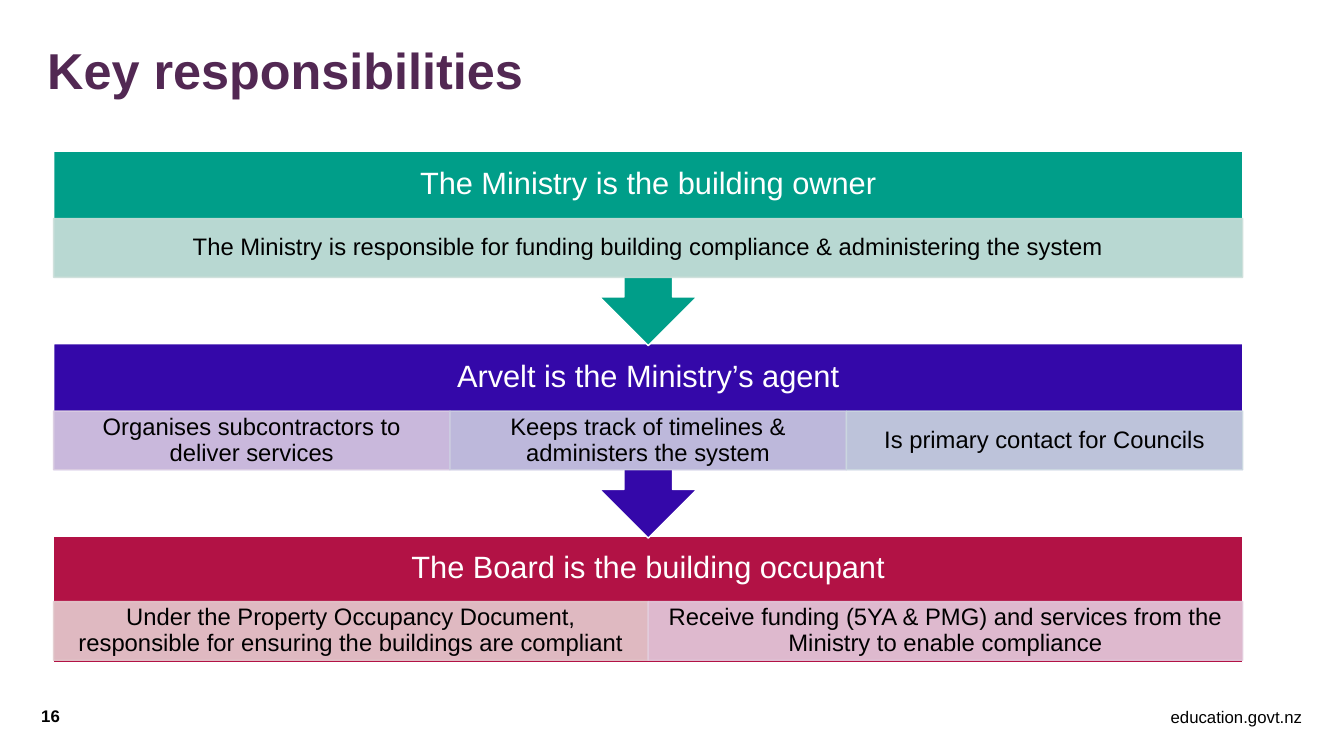
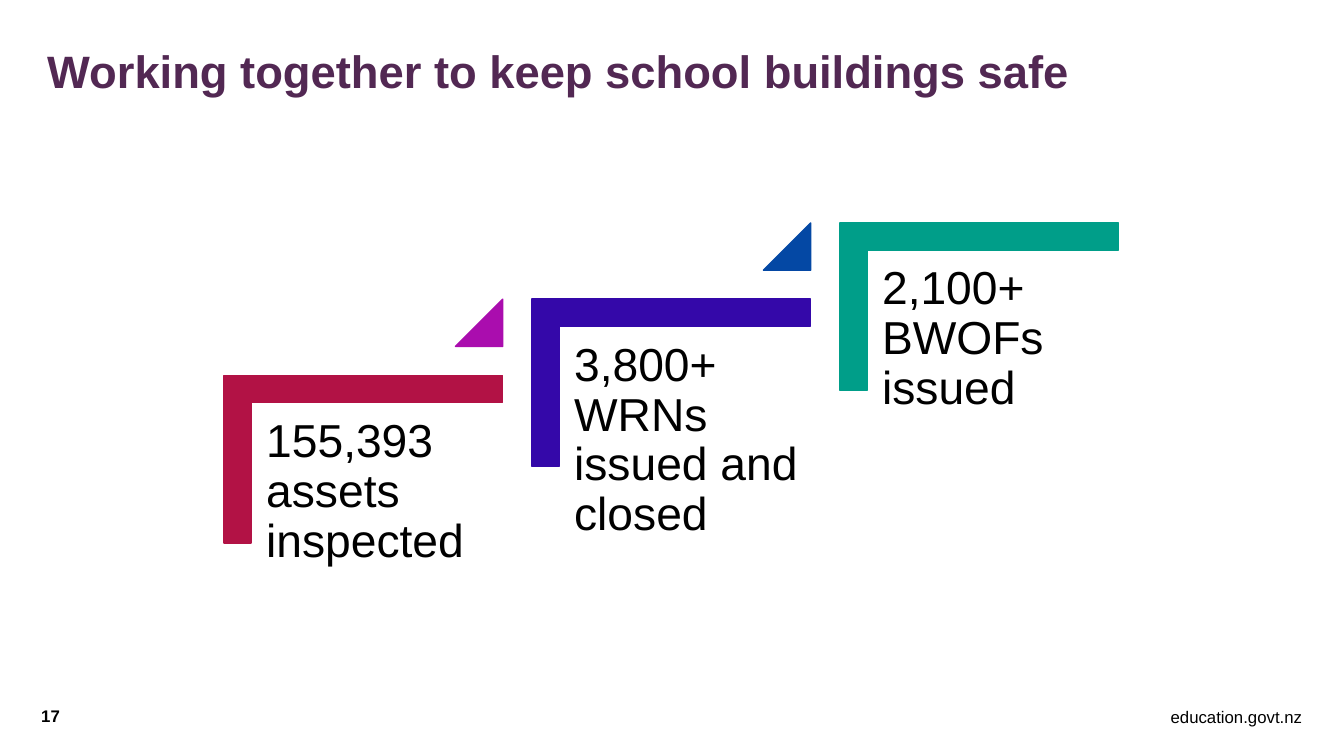
from pptx import Presentation
from pptx.dml.color import RGBColor
from pptx.enum.shapes import MSO_SHAPE as Form
from pptx.enum.text import MSO_ANCHOR as Anchor, MSO_AUTO_SIZE as Fit, PP_ALIGN as Align
from pptx.oxml.ns import qn
from pptx.util import Cm, Pt
from lxml.etree import SubElement

# Shared style
FONT = "Arial"
BLACK = RGBColor(0x00, 0x00, 0x00)
WHITE = RGBColor(0xFF, 0xFF, 0xFF)
PLUM = RGBColor(0x52, 0x28, 0x53)
GREEN = RGBColor(0x00, 0x9E, 0x89)
INDIGO = RGBColor(0x34, 0x08, 0xA9)
RED = RGBColor(0xB2, 0x12, 0x45)
PURPLE = RGBColor(0xAA, 0x0D, 0xAE)
BLUE = RGBColor(0x04, 0x48, 0xA4)
MINT = RGBColor(0xCC, 0xDF, 0xDA)
LILAC = RGBColor(0xDA, 0xCC, 0xE2)
HAZE = RGBColor(0xCC, 0xCC, 0xE1)
MIST = RGBColor(0xCC, 0xD8, 0xE0)
ROSE = RGBColor(0xE4, 0xCC, 0xCF)
PINK = RGBColor(0xE3, 0xCC, 0xDD)

TITLE_BOX = (0.94, 0.84, 27.97, 2.03)
SITE_BOX = (25.37, 17.68, 7.7, 0.76)
PAGE_BOX = (0.79, 17.78, 2.92, 0.51)


def write(frame, text, size, color=BLACK, bold=False, align=Align.LEFT,
          anchor=Anchor.MIDDLE, inset=(0.25, 0.13), lead=0.9):
    """Put one styled paragraph into a text frame."""
    frame.word_wrap = True
    frame.auto_size = Fit.NONE
    frame.vertical_anchor = anchor
    frame.margin_left = frame.margin_right = Cm(inset[0])
    frame.margin_top = frame.margin_bottom = Cm(inset[1])
    para = frame.paragraphs[0]
    para.alignment = align
    para.line_spacing = lead
    run = para.add_run()
    run.text = text
    font = run.font
    font.name, font.size, font.bold = FONT, Pt(size), bold
    font.color.rgb = color


def add_text(slide, box, text, size, **style):
    label = slide.shapes.add_textbox(*map(Cm, box))
    write(label.text_frame, text, size, **style)


def paint(shape, fill, edge, alpha=None):
    """Give a shape flat colours, see-through if alpha is given."""
    shape.shadow.inherit = False
    shape.fill.solid()
    shape.fill.fore_color.rgb = fill
    shape.line.color.rgb = edge
    shape.line.width = Pt(1)
    if alpha:
        for color in shape._element.spPr.iter(qn("a:srgbClr")):
            SubElement(color, qn("a:alpha"), val=str(alpha * 1000))


def add_form(slide, form, box, fill, edge, alpha=None):
    shape = slide.shapes.add_shape(form, *map(Cm, box))
    paint(shape, fill, edge, alpha)
    return shape


def add_page(deck, title, size, page):
    """Start a slide with its title, page number and site."""
    slide = deck.slides.add_slide(deck.slide_layouts[5])
    head = slide.shapes.title
    head.left, head.top, head.width, head.height = map(Cm, TITLE_BOX)
    write(head.text_frame, title, size, color=PLUM, bold=True)
    add_text(slide, SITE_BOX, "education.govt.nz", 12, align=Align.RIGHT,
             anchor=Anchor.TOP, lead=1)
    add_text(slide, PAGE_BOX, page, 12, bold=True, inset=(0.25, 0), lead=1)
    return slide


def add_tier(slide, box, fill, head, cells, last):
    """Draw a band with a heading, a row of cells and an arrow unless last."""
    left, top, width, height = box
    if last:
        add_form(slide, Form.RECTANGLE, (left, top, width, 3.18), fill, WHITE)
    else:
        arrow = add_form(slide, Form.UP_ARROW_CALLOUT, box, fill, WHITE)
        arrow.rotation = 180
    drop = 1.65 if last else 1.7
    add_text(slide, (left, top, width, drop), head, 22, color=WHITE,
             align=Align.CENTER, inset=(0.43, 0))
    wide = width / len(cells)
    for i, (text, tint) in enumerate(cells):
        place = (left + i * wide, top + drop, wide, 1.48)
        cell = add_form(slide, Form.RECTANGLE, place, tint, tint, alpha=90)
        write(cell.text_frame, text, 17, align=Align.CENTER, inset=(0.33, 0.05))


def add_flow(slide, box, tiers):
    """Stack the tiers, lowest first, so each arrow tip lies on the next."""
    left, top, width, pitch = box
    final = len(tiers) - 1
    for i in range(final, -1, -1):
        place = (left, top + i * pitch, width, pitch + 0.05)
        add_tier(slide, place, *tiers[i], last=i == final)


def add_angle(slide, box, fill, thick=0.68):
    """Draw a bracket along the top and left sides of the box."""
    left, top, width, height = box
    right, base = left + width, top + height
    points = [(right, top), (right, top + thick), (left + thick, top + thick),
              (left + thick, base), (left, base)]
    pen = slide.shapes.build_freeform(Cm(left), Cm(top))
    pen.add_line_segments([(Cm(x), Cm(y)) for x, y in points], close=True)
    paint(pen.convert_to_shape(), fill, fill)


def add_step(slide, box, text, fill, accent, rise):
    """Draw a bracket with text, and a wedge if there is an accent."""
    left, top, width, height = box
    add_angle(slide, box, fill)
    add_text(slide, (left + 0.7, top + 0.7, 6.35, 5.56), text, 33,
             anchor=Anchor.TOP, inset=(0.36, 0.36))
    if accent:
        side = 1.19
        wedge = add_form(slide, Form.ISOSCELES_TRIANGLE,
                         (left + width - side, top - rise, side, side),
                         accent, accent)
        wedge.adjustments[0] = 1


def add_stairs(slide, box, steps, run=7.76, rise=1.92):
    """Place the steps upward to the right from the first box."""
    left, top, width, height = box
    for i, step in enumerate(steps):
        place = (left + i * run, top - i * rise, width, height)
        add_step(slide, place, *step, rise=rise)


TIERS = [
    (GREEN, "The Ministry is the building owner", [
        ("The Ministry is responsible for funding building compliance "
         "& administering the system", MINT)]),
    (INDIGO, "Arvelt is the Ministry’s agent", [
        ("Organises subcontractors to deliver services", LILAC),
        ("Keeps track of timelines & administers the system", HAZE),
        ("Is primary contact for Councils", MIST)]),
    (RED, "The Board is the building occupant", [
        ("Under the Property Occupancy Document, responsible for ensuring "
         "the buildings are compliant", ROSE),
        ("Receive funding (5YA & PMG) and services from the Ministry "
         "to enable compliance", PINK)]),
]
STEPS = [
    ("155,393 assets inspected", RED, PURPLE),
    ("3,800+ WRNs issued and closed", INDIGO, BLUE),
    ("2,100+ BWOFs issued", GREEN, None),
]


def main():
    deck = Presentation()
    deck.slide_width, deck.slide_height = Cm(33.87), Cm(19.05)
    duties = add_page(deck, "Key responsibilities", 36, "16")
    add_flow(duties, (1.35, 3.81, 29.97, 4.85), TIERS)
    results = add_page(deck, "Working together to keep school buildings safe",
                       32.4, "17")
    add_stairs(results, (5.65, 9.46, 7.02, 4.22), STEPS)
    deck.save("out.pptx")


if __name__ == "__main__":
    main()
